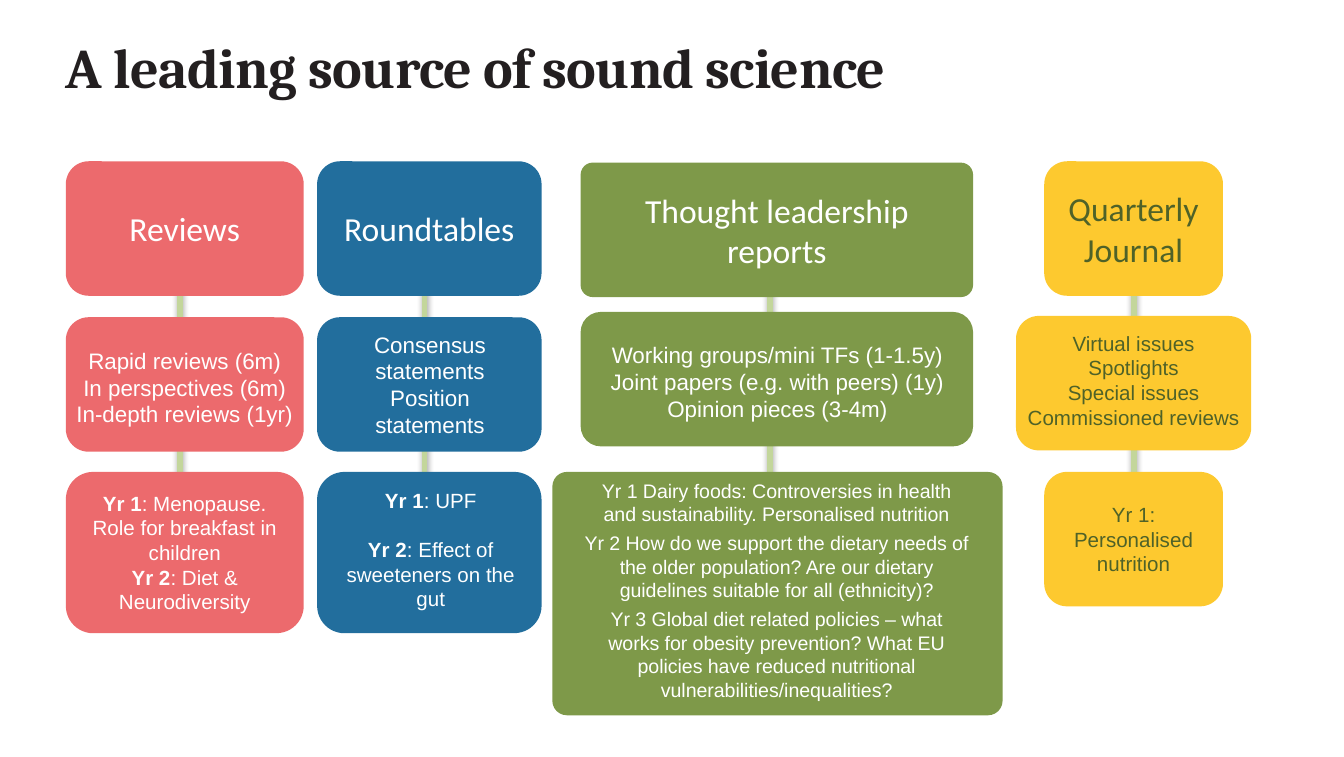
from collections import namedtuple
from lxml.etree import SubElement
from pptx import Presentation
from pptx.dml.color import RGBColor as RGB
from pptx.enum.shapes import MSO_CONNECTOR as Connector, MSO_SHAPE as Shape
from pptx.enum.text import MSO_ANCHOR as Anchor, PP_ALIGN as Align
from pptx.oxml.ns import qn
from pptx.util import Inches, Pt

THEME = {
    "coral": "EC6A6D", "blue": "226E9D", "green": "7E9949", "yellow": "FDC92F",
    "white": "FFFFFF", "moss": "4F6228", "stem": "C3D69B", "black": "231F20",
    "title": 30, "heading": 18, "body": 12, "detail": 11, "small": 10.5,
    "title_font": "Cambria", "heading_font": "Calibri", "body_font": "Arial",
}
Column = namedtuple("Column", "fill ink stem cards")
Card = namedtuple("Card", "area radius size lines label wrap after before",
                  defaults=(None, True, 0, 0))

deck = Presentation()
deck.slide_width, deck.slide_height = Inches(10), Inches(5.63)
page = deck.slides.add_slide(deck.slide_layouts[6])
COL, ROW = deck.slide_width / 100, deck.slide_height / 56.3


def place(left, top, width, height):
    return int(left * COL), int(top * ROW), int(width * COL), int(height * ROW)


def write(frame, lines, size, font, ink, align=Align.CENTER, after=0, before=0):
    for index, line in enumerate(lines):
        para = frame.add_paragraph() if index else frame.paragraphs[0]
        para.alignment = align
        para.space_after = Pt(after)
        para.space_before = Pt(before if index else 0)
        for part, words in enumerate(line.split("*")):
            if words:
                span = para.add_run()
                span.text = words
                span.font.size, span.font.name = Pt(THEME[size]), THEME[font]
                span.font.bold = part % 2 == 1
                span.font.color.rgb = RGB.from_string(THEME[ink])


HEAD, MIDDLE, FOOT, TALL = 12, 23.6, 35.1, 10
ROUND = 0.17

columns = [
    Column("coral", "white", (13.4, 13.5), [
        Card((4.9, HEAD, 17.7, TALL), ROUND, "heading", ["Reviews"]),
        Card((4.9, MIDDLE, 17.7, TALL), ROUND, "body",
             ["Rapid reviews (6m)", "In perspectives (6m)", "In-depth reviews (1yr)"],
             (4.6, 25.3, 18.3, 7.1), wrap=False),
        Card((4.9, FOOT, 17.7, 12), ROUND, "detail",
             ["*Yr 1*: Menopause. Role for breakfast in children",
              "*Yr 2*: Diet & Neurodiversity"], (5.7, 36, 16.1, 10.3)),
    ]),
    Column("blue", "white", (31.6, 13.2), [
        Card((23.6, HEAD, 16.7, TALL), ROUND, "heading", ["Roundtables"]),
        Card((23.6, MIDDLE, 16.7, TALL), ROUND, "body",
             ["Consensus statements", "Position statements"], (24.3, 24.1, 15.4, 9.1)),
        Card((23.6, FOOT, 16.7, 12), ROUND, "detail",
             ["*Yr 1*: UPF", "*Yr 2*: Effect of sweeteners on the gut"],
             (24, 35.8, 16.1, 10.3), before=13),
    ]),
    Column("green", "white", (57.3, 14), [
        Card((43.2, 12.1, 29.2, TALL), 0.09, "heading", ["Thought leadership reports"]),
        Card((43.2, 23.2, 29.2, TALL), 0.15, "body",
             ["Working groups/mini TFs (1-1.5y)", "Joint papers (e.g. with peers) (1y)",
              "Opinion pieces (3-4m)"], (44.4, 24.9, 26.9, 10.1), wrap=False),
        Card((41.1, FOOT, 33.5, 18.1), 0.06, "small",
             ["Yr 1 Dairy foods: Controversies in health and sustainability. "
              "Personalised nutrition",
              "Yr 2 How do we support the dietary needs of the older population? "
              "Are our dietary guidelines suitable for all (ethnicity)?",
              "Yr 3 Global diet related policies – what works for obesity prevention? "
              "What EU policies have reduced nutritional vulnerabilities/inequalities?"],
             (42.4, FOOT, 30.8, 21.2), after=3),
    ]),
    Column("yellow", "moss", (84.4, 13.7), [
        Card((77.7, HEAD, 13.3, TALL), ROUND, "heading", ["Quarterly Journal"]),
        Card((75.6, 23.5, 17.5, TALL), ROUND, "detail",
             ["Virtual issues", "Spotlights", "Special issues", "Commissioned reviews"],
             (75.3, 24.1, 18.1, 8.4)),
        Card((77.7, FOOT, 13.3, TALL), ROUND, "detail", ["Yr 1: Personalised nutrition"]),
    ]),
]

title = page.shapes.add_textbox(*place(4.9, 2.4, 83.3, 5)).text_frame
title.word_wrap = True
title.margin_left = title.margin_right = title.margin_top = title.margin_bottom = 0
write(title, ["*A leading source of sound science*"], "title", "title_font", "black", Align.LEFT)
title.paragraphs[0].runs[0].font._element.set("spc", "-30")

for column in columns:
    left, top, _, drop = place(*column.stem, 0, 30.2)
    stem = page.shapes.add_connector(Connector.STRAIGHT, left, top, left, top + drop)
    stem.line.color.rgb = RGB.from_string(THEME["stem"])
    stem.line.width = Pt(3)
    effects = SubElement(stem._element.spPr, qn("a:effectLst"))
    shadow = SubElement(effects, qn("a:outerShdw"), blurRad=str(Pt(3.1)), dist=str(Pt(1.8)),
                        dir="5400000", rotWithShape="0")
    shade = SubElement(shadow, qn("a:srgbClr"), val="000000")
    SubElement(shade, qn("a:alpha"), val="35000")

for column in columns:
    for card in column.cards:
        box = page.shapes.add_shape(Shape.ROUNDED_RECTANGLE, *place(*card.area))
        box.adjustments[0] = card.radius
        box.shadow.inherit = False
        box.fill.solid()
        box.fill.fore_color.rgb = RGB.from_string(THEME[column.fill])
        box.line.fill.background()
        frame = box.text_frame
        frame.vertical_anchor = Anchor.MIDDLE
        if card.label:
            frame = page.shapes.add_textbox(*place(*card.label)).text_frame
        frame.word_wrap = card.wrap
        font = "heading_font" if card.size == "heading" else "body_font"
        write(frame, card.lines, card.size, font, column.ink,
              after=card.after, before=card.before)

deck.save("out.pptx")
